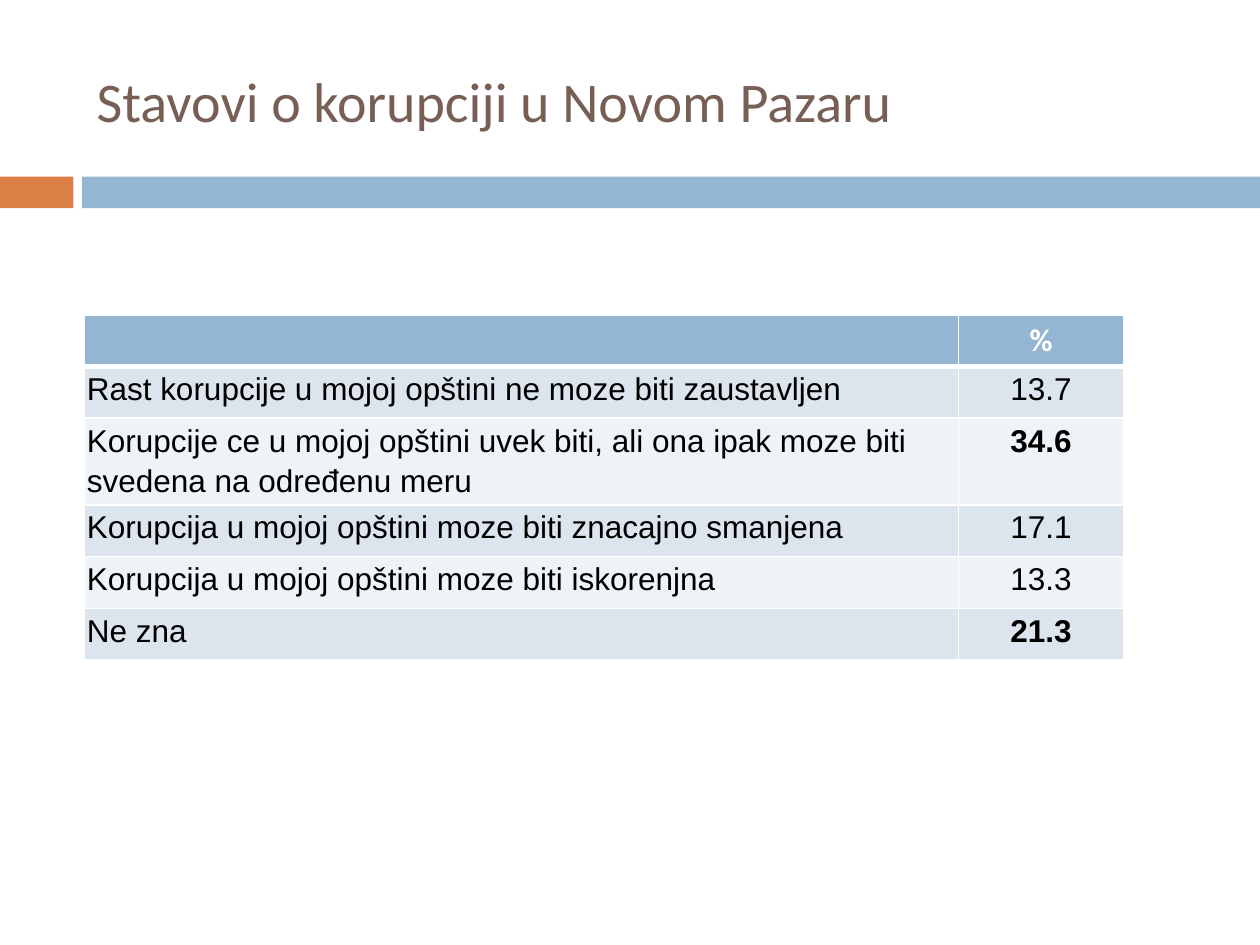
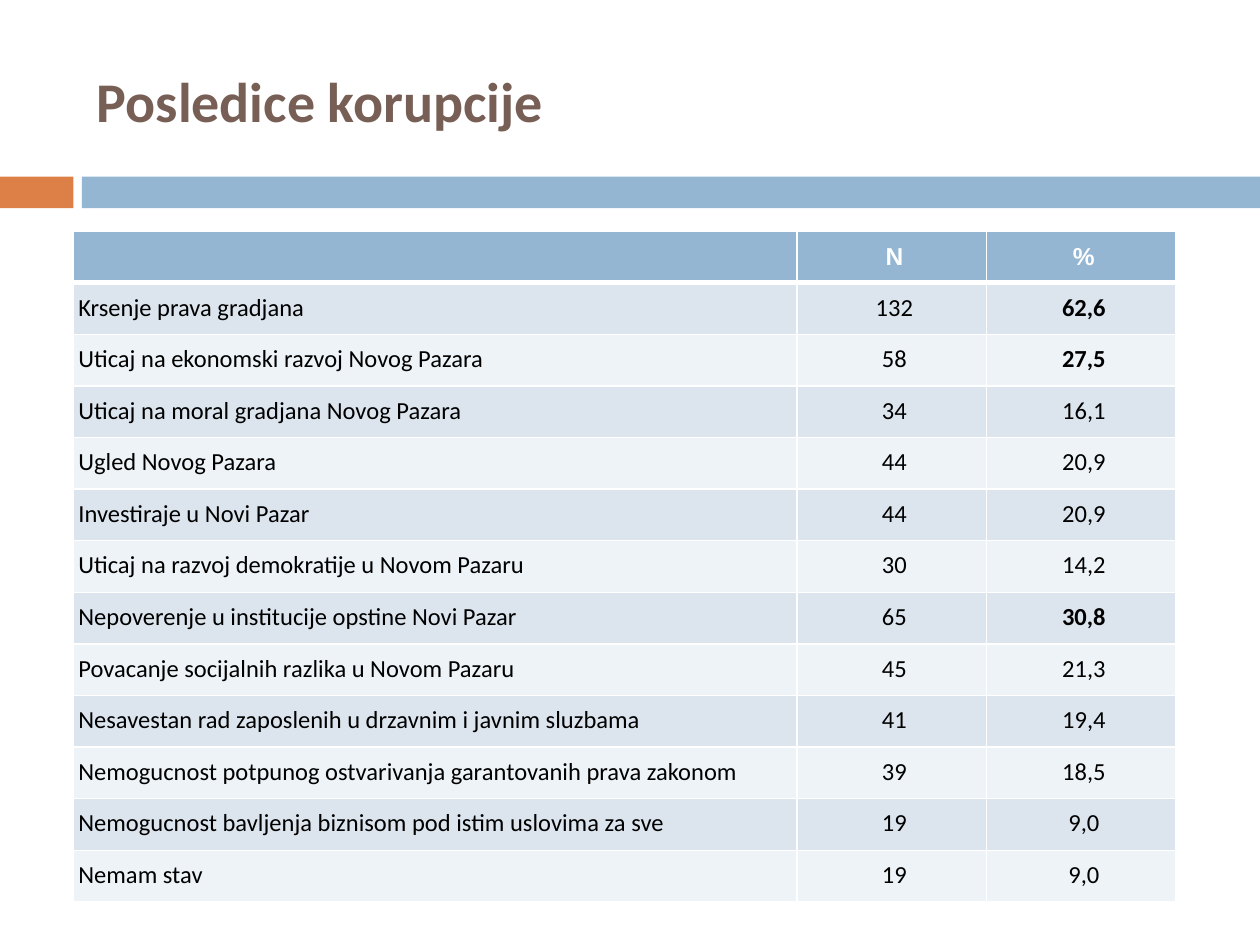
from dataclasses import dataclass

from lxml.etree import SubElement
from pptx import Presentation
from pptx.dml.color import RGBColor
from pptx.enum.shapes import MSO_SHAPE
from pptx.enum.text import MSO_ANCHOR, PP_ALIGN
from pptx.oxml.ns import qn
from pptx.util import Cm, Pt


@dataclass(frozen=True)
class Theme:
    title_color: str = "775F55"
    accent: str = "DD8047"
    blue: str = "94B6D2"
    stripes: tuple = ("DCE5EE", "EEF3F7")
    white: str = "FFFFFF"
    black: str = "000000"
    title_font: str = "Calibri"
    title_size: int = 32
    grid_width: int = 1
    header_rule_width: int = 3


@dataclass(frozen=True)
class TableStyle:
    size: int
    header_font: str
    body_font: str
    anchor: MSO_ANCHOR
    line_spacing: object
    margins: tuple  # left, top, right, bottom in centimetres
    header_margins: tuple


@dataclass(frozen=True)
class Box:
    left: float
    top: float
    width: float
    height: float

    def lengths(self):
        return Cm(self.left), Cm(self.top), Cm(self.width), Cm(self.height)


THEME = Theme()
PAGE_WIDTH, PAGE_HEIGHT = 25.4, 19.05
TITLE_BOX = Box(1.7, 0.64, 22.66, 2.74)
BAND_BOX = Box(0, 3.56, PAGE_WIDTH, 0.64)
ROW_HEIGHT = 1.04

ATTITUDE_STYLE = TableStyle(18, "Calibri", "Arial", MSO_ANCHOR.TOP, 1.15,
                            (0.05, 0, 0.05, 0), (0.25, 0.13, 0.25, 0.13))
CONSEQUENCE_STYLE = TableStyle(14, "Arial", "Calibri", MSO_ANCHOR.MIDDLE, Pt(16),
                               (0.1, 0, 0, 0), (0.1, 0, 0, 0))

ATTITUDES = [
    ("", "%"),
    ("Rast korupcije u mojoj opštini ne moze biti zaustavljen", "13.7"),
    ("Korupcije ce u mojoj opštini uvek biti, ali ona ipak moze biti "
     "svedena na određenu meru", "34.6"),
    ("Korupcija u mojoj opštini moze biti znacajno smanjena", "17.1"),
    ("Korupcija u mojoj opštini moze biti iskorenjna", "13.3"),
    ("Ne zna", "21.3"),
]
CONSEQUENCES = [
    ("", "N", "%"),
    ("Krsenje prava gradjana", "132", "62,6"),
    ("Uticaj na ekonomski razvoj Novog Pazara", "58", "27,5"),
    ("Uticaj na moral gradjana Novog Pazara", "34", "16,1"),
    ("Ugled Novog Pazara", "44", "20,9"),
    ("Investiraje u Novi Pazar", "44", "20,9"),
    ("Uticaj na razvoj demokratije u Novom Pazaru", "30", "14,2"),
    ("Nepoverenje u institucije opstine Novi Pazar", "65", "30,8"),
    ("Povacanje socijalnih razlika u Novom Pazaru", "45", "21,3"),
    ("Nesavestan rad zaposlenih u drzavnim i javnim sluzbama", "41", "19,4"),
    ("Nemogucnost potpunog ostvarivanja garantovanih prava zakonom", "39", "18,5"),
    ("Nemogucnost bavljenja biznisom pod istim uslovima za sve", "19", "9,0"),
    ("Nemam stav", "19", "9,0"),
]


def set_fill(target, color):
    target.fill.solid()
    target.fill.fore_color.rgb = RGBColor.from_string(color)


def format_font(font, name, size, color, bold):
    font.name, font.size, font.bold = name, Pt(size), bold
    font.color.rgb = RGBColor.from_string(color)


def add_title(page, box, text, bold):
    frame = page.shapes.add_textbox(*box.lengths()).text_frame
    frame.word_wrap = True
    frame.vertical_anchor = MSO_ANCHOR.MIDDLE
    frame.text = text
    format_font(frame.paragraphs[0].runs[0].font, THEME.title_font,
                THEME.title_size, THEME.title_color, bold)


def add_band(page, box):
    accent_width, gap = 1.48, 0.17
    blue_left = accent_width + gap
    parts = [(0, accent_width, THEME.accent),
             (blue_left, box.width - blue_left, THEME.blue)]
    for offset, width, color in parts:
        part = Box(box.left + offset, box.top, width, box.height)
        bar = page.shapes.add_shape(MSO_SHAPE.RECTANGLE, *part.lengths())
        bar.shadow.inherit = False
        bar.line.fill.background()
        set_fill(bar, color)


def set_borders(cell, row):
    """Draw the white grid, with a heavier rule between header and body."""
    properties = cell._tc.get_or_add_tcPr()
    heavy_edge = {0: "lnB", 1: "lnT"}.get(row)
    for edge in ("lnL", "lnR", "lnT", "lnB"):
        width = THEME.header_rule_width if edge == heavy_edge else THEME.grid_width
        line = SubElement(properties, qn(f"a:{edge}"), w=str(Pt(width)))
        fill = SubElement(line, qn("a:solidFill"))
        SubElement(fill, qn("a:srgbClr"), val=THEME.white)


def format_cell(cell, text, row, column, style, bold):
    is_header = row == 0
    set_borders(cell, row)
    set_fill(cell, THEME.blue if is_header else THEME.stripes[(row - 1) % 2])
    if not text:
        return
    margins = style.header_margins if is_header else style.margins
    (cell.margin_left, cell.margin_top,
     cell.margin_right, cell.margin_bottom) = map(Cm, margins)
    cell.vertical_anchor = style.anchor
    cell.text_frame.text = text
    paragraph = cell.text_frame.paragraphs[0]
    paragraph.alignment = PP_ALIGN.CENTER if column else PP_ALIGN.LEFT
    if not is_header or style.anchor == MSO_ANCHOR.MIDDLE:
        paragraph.line_spacing = style.line_spacing
    format_font(paragraph.runs[0].font,
                style.header_font if is_header else style.body_font, style.size,
                THEME.white if is_header else THEME.black, is_header or bold)


def add_survey_table(page, left, top, widths, rows, style, highlights):
    """Add a striped table; highlights are the values set in bold."""
    box = Box(left, top, sum(widths), ROW_HEIGHT * len(rows))
    table = page.shapes.add_table(len(rows), len(widths), *box.lengths()).table
    for column, width in zip(table.columns, widths):
        column.width = Cm(width)
    for row, values in enumerate(rows):
        table.rows[row].height = Cm(ROW_HEIGHT)
        for column, text in enumerate(values):
            format_cell(table.cell(row, column), text, row, column, style,
                        text in highlights)


def add_page(deck, title, bold=False):
    page = deck.slides.add_slide(deck.slide_layouts[6])
    add_band(page, BAND_BOX)
    add_title(page, TITLE_BOX, title, bold)
    return page


def main():
    deck = Presentation()
    deck.slide_width, deck.slide_height = Cm(PAGE_WIDTH), Cm(PAGE_HEIGHT)

    attitudes = add_page(deck, "Stavovi o korupciji u Novom Pazaru")
    add_survey_table(attitudes, 1.7, 6.35, (17.62, 3.33), ATTITUDES,
                     ATTITUDE_STYLE, {"34.6", "21.3"})

    consequences = add_page(deck, "Posledice korupcije", bold=True)
    add_survey_table(consequences, 1.48, 4.66, (14.59, 3.82, 3.82), CONSEQUENCES,
                     CONSEQUENCE_STYLE, {"62,6", "27,5", "30,8"})

    deck.save("out.pptx")


if __name__ == "__main__":
    main()
